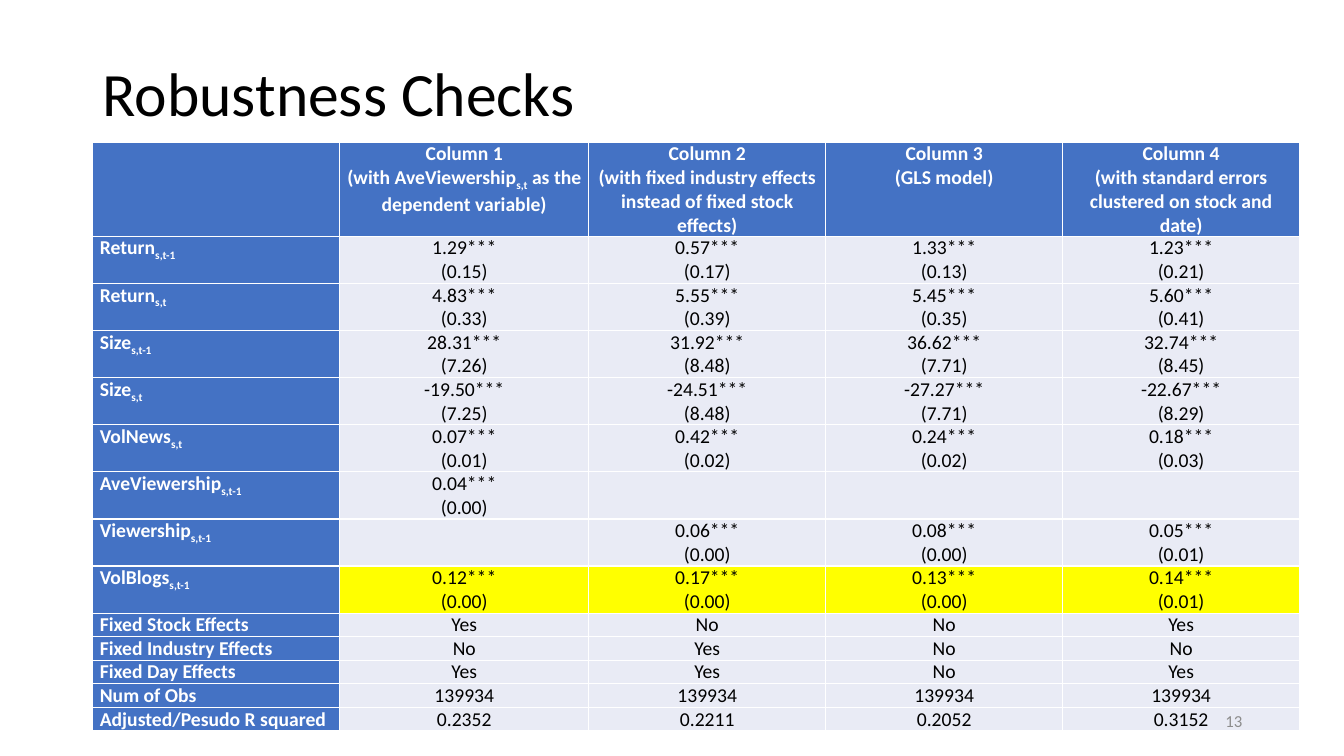
import pptx
import pptx.dml.color
import pptx.enum.text
import pptx.util
from dataclasses import dataclass

Inches = pptx.util.Inches
Pt = pptx.util.Pt
Align = pptx.enum.text.PP_ALIGN
Anchor = pptx.enum.text.MSO_ANCHOR


@dataclass(frozen=True)
class Theme:
    font: str = "Calibri"
    black: str = "000000"
    white: str = "FFFFFF"
    gray: str = "8C8C8C"
    header_fill: str = "4472C4"
    body_fill: str = "E9EBF5"
    highlight: str = "FFFF00"
    title_size: int = 44
    table_size: int = 14
    number_size: int = 12


theme = Theme()


def write(frame, text, size, color, align=Align.LEFT, bold=False):
    """Fill a text frame line by line; text within braces becomes subscript."""
    for index, line in enumerate(text.split("\n")):
        para = frame.paragraphs[0] if index == 0 else frame.add_paragraph()
        para.alignment = align
        para.font.name = theme.font
        para.font.size = Pt(size)
        para.font.bold = bold
        para.font.color.rgb = pptx.dml.color.RGBColor.from_string(color)
        for part, piece in enumerate(line.replace("}", "{").split("{")):
            if piece:
                span = para.add_run()
                span.text = piece
                if part % 2:
                    span.font._element.set("baseline", "-25000")


def add_label(page, area, text, size, color, align):
    box = page.shapes.add_textbox(*[Inches(length) for length in area])
    box.text_frame.word_wrap = True
    box.text_frame.vertical_anchor = Anchor.MIDDLE
    write(box.text_frame, text, size, color, align)
    return box


deck = pptx.Presentation()
deck.slide_width = Inches(13.33)
deck.slide_height = Inches(7.5)
page = deck.slides.add_slide(deck.slide_layouts[6])

title = add_label(page, (0.92, 0.23, 5, 1.45), "Robustness Checks",
                  theme.title_size, theme.black, Align.LEFT)
title.text_frame.paragraphs[0].line_spacing = 0.9

headings = [
    "",
    "Column 1\n(with AveViewership{s,t} as the dependent variable)",
    "Column 2\n(with fixed industry effects instead of fixed stock effects)",
    "Column 3\n(GLS model)",
    "Column 4\n(with standard errors clustered on stock and date)",
]
# Each estimate is followed by its standard error on a second line.
estimates = [
    ["Return{s,t-1}", "1.29***\n(0.15)", "0.57***\n(0.17)", "1.33***\n(0.13)", "1.23***\n(0.21)"],
    ["Return{s,t}", "4.83***\n(0.33)", "5.55***\n(0.39)", "5.45***\n(0.35)", "5.60***\n(0.41)"],
    ["Size{s,t-1}", "28.31***\n(7.26)", "31.92***\n(8.48)", "36.62***\n(7.71)", "32.74***\n(8.45)"],
    ["Size{s,t}", "-19.50***\n(7.25)", "-24.51***\n(8.48)", "-27.27***\n(7.71)", "-22.67***\n(8.29)"],
    ["VolNews{s,t}", "0.07***\n(0.01)", "0.42***\n(0.02)", "0.24***\n(0.02)", "0.18***\n(0.03)"],
    ["AveViewership{s,t-1}", "0.04***\n(0.00)", "", "", ""],
    ["Viewership{s,t-1}", "", "0.06***\n(0.00)", "0.08***\n(0.00)", "0.05***\n(0.01)"],
    ["VolBlogs{s,t-1}", "0.12***\n(0.00)", "0.17***\n(0.00)", "0.13***\n(0.00)", "0.14***\n(0.01)"],
]
model_facts = [
    ["Fixed Stock Effects", "Yes", "No", "No", "Yes"],
    ["Fixed Industry Effects", "No", "Yes", "No", "No"],
    ["Fixed Day Effects", "Yes", "Yes", "No", "Yes"],
    ["Num of Obs", "139934", "139934", "139934", "139934"],
    ["Adjusted/Pesudo R squared", "0.2352", "0.2211", "0.2052", "0.3152"],
]
rows = [headings] + estimates + model_facts
highlighted_row = len(estimates)
column_widths = [2.45, 2.47, 2.35, 2.35, 2.35]
row_heights = [0.52] + [0.38] * len(estimates) + [0.15] * len(model_facts)

table = page.shapes.add_table(len(rows), len(headings), Inches(0.92), Inches(1.41),
                              Inches(sum(column_widths)), Inches(sum(row_heights))).table
table.first_col = True
table.horz_banding = False
for column, width in zip(table.columns, column_widths):
    column.width = Inches(width)
for row, height in zip(table.rows, row_heights):
    row.height = Inches(height)

for row_index, texts in enumerate(rows):
    for column_index, text in enumerate(texts):
        cell = table.cell(row_index, column_index)
        cell.margin_left = cell.margin_right = Inches(0.07)
        cell.margin_top = cell.margin_bottom = 0
        is_header = row_index == 0 or column_index == 0
        if is_header:
            fill = theme.header_fill
        elif row_index == highlighted_row:
            fill = theme.highlight
        else:
            fill = theme.body_fill
        cell.fill.solid()
        cell.fill.fore_color.rgb = pptx.dml.color.RGBColor.from_string(fill)
        write(cell.text_frame, text, theme.table_size,
              theme.white if is_header else theme.black,
              Align.LEFT if column_index == 0 else Align.CENTER, is_header)

add_label(page, (9.42, 6.95, 3, 0.4), "13", theme.number_size, theme.gray, Align.RIGHT)

deck.save("out.pptx")
